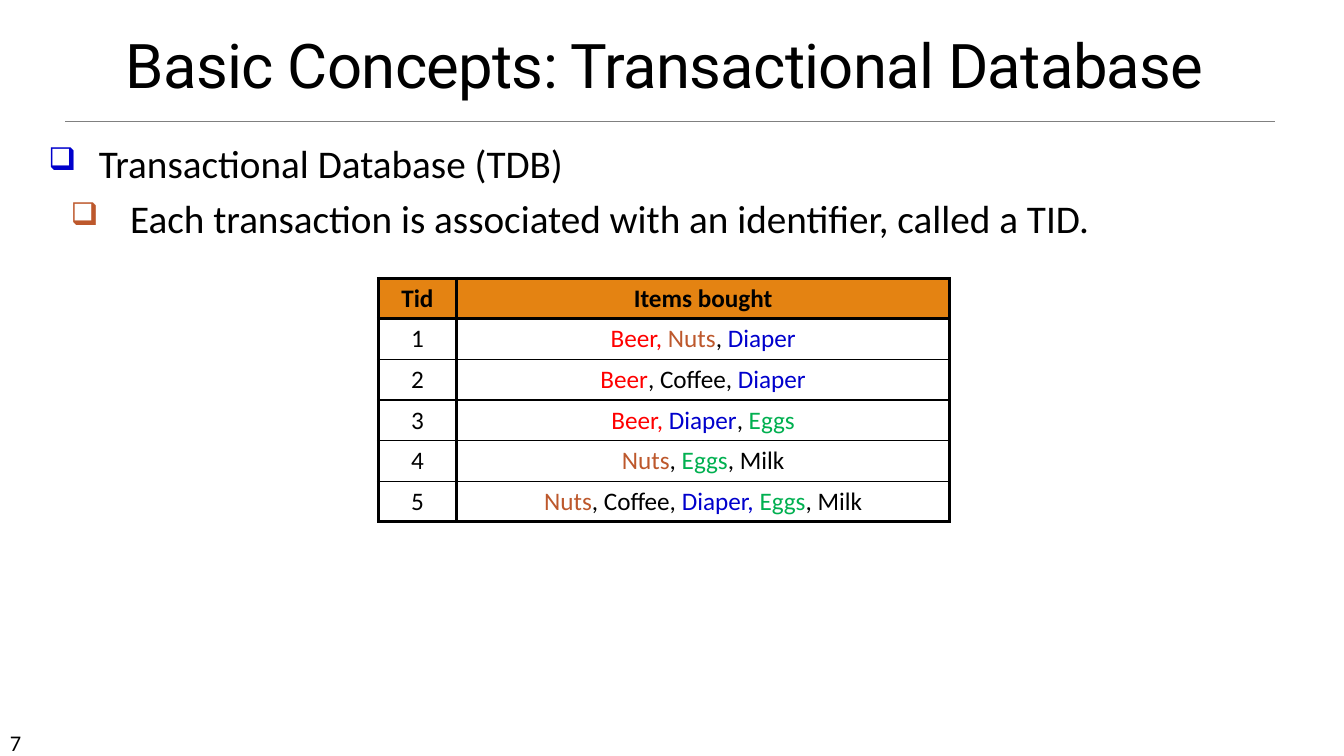
from lxml.etree import SubElement
from pptx import Presentation
from pptx.dml.color import RGBColor
from pptx.enum.shapes import MSO_CONNECTOR as Connector
from pptx.enum.text import MSO_ANCHOR as Anchor, MSO_AUTO_SIZE as AutoSize, PP_ALIGN as Align
from pptx.oxml.ns import qn
from pptx.util import Cm, Pt

COLORS = {
    "black": "000000", "rule": "808080", "header": "E48312",
    "red": "FF0000", "brown": "BD582C", "blue": "0000CC", "green": "00B050",
}


def add_span(para, text, size, color="black", font="Calibri", bold=False):
    span = para.add_run()
    span.text = text
    span.font.name = font
    span.font.size = Pt(size)
    span.font.bold = bold
    span.font.color.rgb = RGBColor.from_string(COLORS[color])
    return span


def add_border(cell, side, width):
    line = SubElement(cell._tc.get_or_add_tcPr(), qn(f"a:ln{side}"), w=str(Pt(width)))
    fill = SubElement(line, qn("a:solidFill"))
    SubElement(fill, qn("a:srgbClr"), val=COLORS["black"])


deck = Presentation()
deck.slide_width, deck.slide_height = Cm(33.87), Cm(19.05)
page = deck.slides.add_slide(deck.slide_layouts[5])

# Title
title = page.shapes.title
title.left, title.top, title.width, title.height = Cm(0.97), Cm(0.61), Cm(31.57), Cm(2.06)
title.text_frame.auto_size = AutoSize.NONE
title.text_frame.vertical_anchor = Anchor.BOTTOM
para = title.text_frame.paragraphs[0]
para.alignment = Align.CENTER
para.line_spacing = 0.85
span = add_span(para, "Basic Concepts: Transactional Database", 44, font="Roboto")
span.font._element.set("spc", "-50")

# Rule under the title
rule = page.shapes.add_connector(Connector.STRAIGHT, Cm(1.65), Cm(3.05), Cm(32.13), Cm(3.05))
rule.line.color.rgb = RGBColor.from_string(COLORS["rule"])
rule.line.width = Pt(0.5)
SubElement(rule._element.spPr, qn("a:effectLst"))

# Bulleted text: level, left margin, hanging indent, bullet colour, wording
bullets = [
    (0, 1.27, 1.27, "blue", "Transactional Database (TDB)"),
    (1, 2.06, 1.5, "brown",
     "Each\u00a0transaction is associated with an identifier, called a TID."),
]
body = page.shapes.add_textbox(Cm(0.97), Cm(3.38), Cm(31.67), Cm(14.96)).text_frame
body.word_wrap = True
for level, margin, hanging, color, text in bullets:
    para = body.add_paragraph() if level else body.paragraphs[0]
    para.level = level
    para.space_before = Pt(6)
    settings = para._p.get_or_add_pPr()
    settings.set("marL", str(Cm(margin)))
    settings.set("indent", str(-Cm(hanging)))
    bullet_color = SubElement(settings, qn("a:buClr"))
    SubElement(bullet_color, qn("a:srgbClr"), val=COLORS[color])
    SubElement(settings, qn("a:buSzPct"), val="80000")
    SubElement(settings, qn("a:buChar"), char="❑")
    add_span(para, text, 28)

# Transactions: each item list is a series of coloured spans
transactions = [
    [("Beer, ", "red"), ("Nuts", "brown"), (", ", "black"), ("Diaper", "blue")],
    [("Beer", "red"), (", Coffee, ", "black"), ("Diaper", "blue")],
    [("Beer, ", "red"), ("Diaper", "blue"), (", ", "black"), ("Eggs", "green")],
    [("Nuts", "brown"), (", ", "black"), ("Eggs", "green"), (", Milk", "black")],
    [("Nuts", "brown"), (", Coffee, ", "black"), ("Diaper, ", "blue"),
     ("Eggs", "green"), (", Milk", "black")],
]
rows = [([("Tid", "black")], [("Items bought", "black")])]
rows += [([(str(tid), "black")], items) for tid, items in enumerate(transactions, 1)]

# Table with heavy borders around the header, columns and outer edge
row_height = 1.02
table = page.shapes.add_table(
    len(rows), 2, Cm(9.53), Cm(7.01), Cm(14.4), Cm(row_height * len(rows))).table
table.columns[0].width, table.columns[1].width = Cm(1.98), Cm(12.42)
for index, row in enumerate(rows):
    table.rows[index].height = Cm(row_height)
    is_header = index == 0
    top = 2.25 if index <= 1 else 1
    bottom = 2.25 if index in (0, len(rows) - 1) else 1
    for column, spans in enumerate(row):
        cell = table.cell(index, column)
        cell.margin_left = cell.margin_right = Cm(0.33)
        cell.margin_top = cell.margin_bottom = Cm(0.13)
        for side, width in (("L", 2.25), ("R", 2.25), ("T", top), ("B", bottom)):
            add_border(cell, side, width)
        if is_header:
            cell.fill.solid()
            cell.fill.fore_color.rgb = RGBColor.from_string(COLORS["header"])
        else:
            cell.fill.background()
        para = cell.text_frame.paragraphs[0]
        para.alignment = Align.CENTER
        for text, color in spans:
            add_span(para, text, 18, color, bold=is_header)

# Page number
number = page.shapes.add_textbox(Cm(0), Cm(18.24), Cm(2.97), Cm(0.76)).text_frame
number.word_wrap = True
add_span(number.paragraphs[0], "7", 16)

deck.save("out.pptx")
